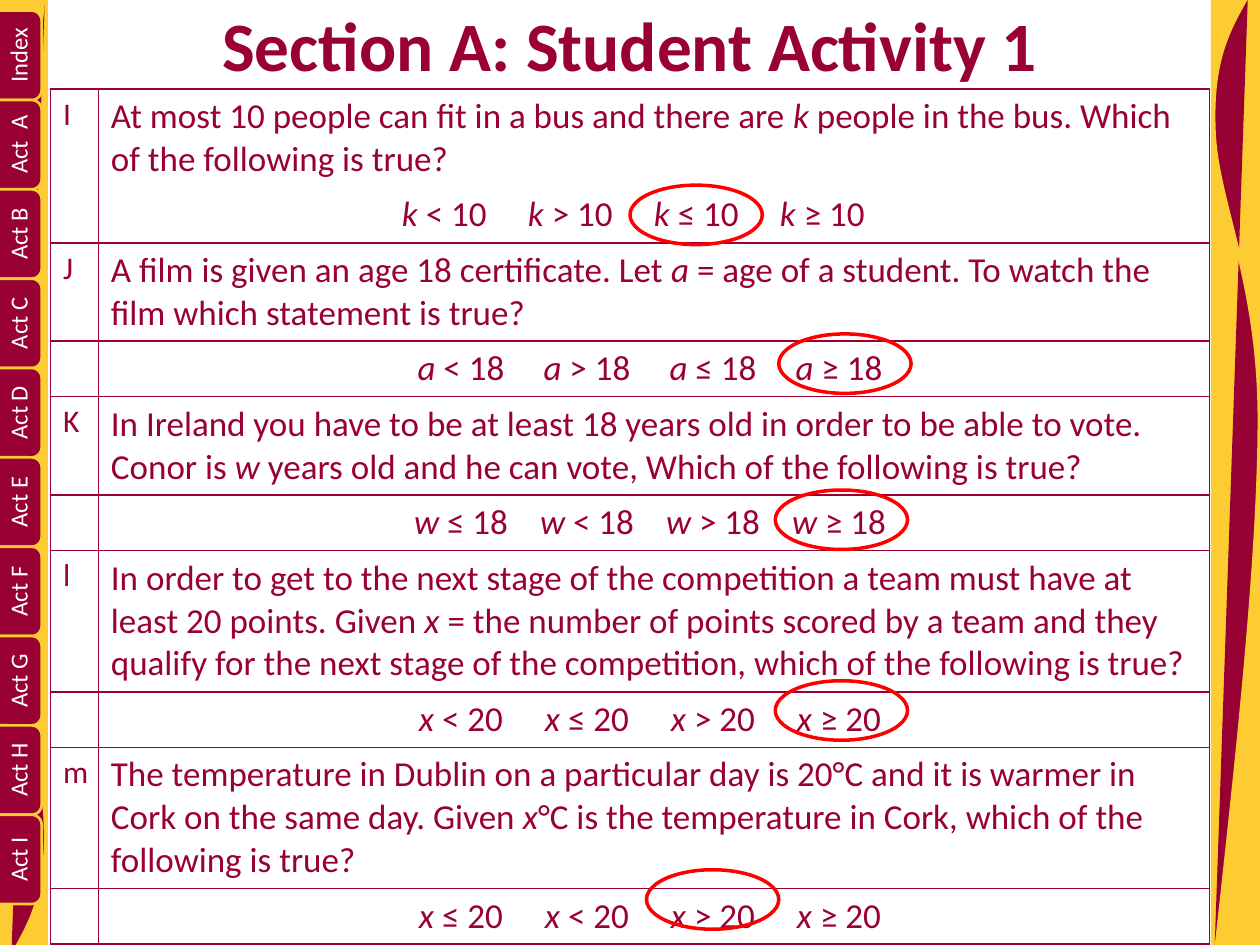
from typing import NamedTuple

from lxml.etree import SubElement
from pptx import Presentation
from pptx.dml.color import RGBColor
from pptx.enum.shapes import MSO_SHAPE as Shape
from pptx.enum.text import MSO_ANCHOR as Anchor, PP_ALIGN as Align
from pptx.oxml.ns import qn
from pptx.util import Pt

MAROON, GOLD, WHITE, RED = "990033", "FDCC33", "FFFFFF", "FF0000"
RIBBON = "970033"
PLAIN_TABLE = "{2D5ABB26-0587-4C30-8999-92F81FD0307C}"  # no style, no grid


class Question(NamedTuple):
    label: str
    wording: str  # asterisks enclose italics
    options: str
    ring_left: float
    ring_top: float
    label_align: Align = Align.LEFT


def choices(variable: str, signs: str, number: int) -> str:
    return "\t".join(f"*{variable} *{sign} {number} " for sign in signs)


QUESTIONS = [
    Question("I", "At most 10 people can fit in a bus and there are *k *people in the bus. "
             "Which of the following is true?", choices("k", "<>≤≥", 10) + "\t", 360, 105.8),
    Question("J", "A film is given an age 18 certificate. Let *a *= age of a student. "
             "To watch the film which statement is true?",
             choices("a", "<>≤≥", 18), 445, 190.8),
    Question("K", "In Ireland you have to be at least 18 years old in order to be able to vote. "
             "Conor is *w *years old and he can vote, Which of the following is true?",
             choices("w", "≤<>≥", 18), 443, 280),
    Question("l", "In order to get to the next stage of the competition a team must have at "
             "least 20 points. Given *x *= the number of points scored by a team and they "
             "qualify for the next stage of the competition, which of the following is true?",
             choices("x", "<≤>≥", 20), 443, 389),
    Question("m", "The temperature in Dublin on a particular day is 20°C and it is warmer in "
             "Cork on the same day. Given *x*°C is the temperature in Cork, which of the "
             "following is true?", choices("x", "≤<>≥", 20), 369.4, 497, Align.CENTER),
]


def color(value: str) -> RGBColor:
    return RGBColor.from_string(value)


def write(frame, text: str, *, size: float, ink: str = MAROON,
          bold: bool = False, align: Align = Align.LEFT) -> None:
    """Fill a text frame; text between asterisks is italic."""
    paragraph = frame.paragraphs[0]
    paragraph.alignment = align
    for index, part in enumerate(text.split("*")):
        if part:
            run = paragraph.add_run()
            run.text = part
            run.font.name = "Calibri"
            run.font.size = Pt(size)
            run.font.bold = bold
            run.font.italic = index % 2 == 1
            run.font.color.rgb = color(ink)


def paint(shape, fill: str | None, line: str | None, width: float = 2) -> None:
    shape.shadow.inherit = False
    if fill:
        shape.fill.solid()
        shape.fill.fore_color.rgb = color(fill)
    else:
        shape.fill.background()
    if line:
        shape.line.color.rgb = color(line)
        shape.line.width = Pt(width)
    else:
        shape.line.fill.background()


def add_figure(slide, kind: Shape, left: float, top: float, width: float, height: float):
    return slide.shapes.add_shape(kind, Pt(left), Pt(top), Pt(width), Pt(height))


def add_ribbon(slide, points: list[tuple[float, float]]) -> None:
    """Draw a start point followed by triples of Bézier points."""
    start, *rest = [(Pt(x), Pt(y)) for x, y in points]
    builder = slide.shapes.build_freeform(*start, scale=1.0)
    builder.add_line_segments(rest, close=False)
    ribbon = builder.convert_to_shape()
    segments = list(ribbon._element.iter(qn("a:lnTo")))
    for first in range(0, len(segments), 3):
        triple = segments[first:first + 3]
        curve = triple[0].makeelement(qn("a:cubicBezTo"), {})
        triple[0].addprevious(curve)
        for segment in triple:
            curve.append(segment[0])
            segment.getparent().remove(segment)
    paint(ribbon, RIBBON, GOLD)


def border(cell, sides: str) -> None:
    properties = cell._tc.get_or_add_tcPr()
    cell.fill.background()
    for position, side in enumerate(sides):
        edge = properties.makeelement(qn(f"a:ln{side}"), {"w": str(Pt(1))})
        fill = SubElement(edge, qn("a:solidFill"))
        SubElement(fill, qn("a:srgbClr"), val=MAROON)
        properties.insert(position, edge)  # edges precede the cell fill


def add_questions(slide) -> None:
    table = slide.shapes.add_table(2 * len(QUESTIONS), 2, Pt(28.8), Pt(50.8),
                                   Pt(662.4), Pt(295)).table
    table._tbl.tblPr.find(qn("a:tableStyleId")).text = PLAIN_TABLE
    table.first_row = table.horz_banding = False
    table.columns[0].width, table.columns[1].width = Pt(27.4), Pt(635)
    for row in table.rows:
        row.height = Pt(29.5)
    for index, question in enumerate(QUESTIONS):
        asked, answer = 2 * index, 2 * index + 1
        write(table.cell(asked, 0).text_frame, question.label, size=18,
              align=question.label_align)
        write(table.cell(asked, 1).text_frame, question.wording, size=20)
        write(table.cell(answer, 1).text_frame, question.options, size=20,
              align=Align.CENTER)
        for column in range(2):
            border(table.cell(asked, column), "LRT")
            border(table.cell(answer, column), "LRB")


def main() -> None:
    deck = Presentation()
    deck.slide_width, deck.slide_height = Pt(720), Pt(540)
    slide = deck.slides.add_slide(deck.slide_layouts[5])

    # Side bands; the right ribbon is the left one turned by 180 degrees
    left_edge = [(25.9, -9.4), (13, 107.3), (0, 224.6), (0, 304.6), (0, 384.5),
                 (25.2, 430.6), (25.9, 470.9), (27.4, 511.2), (16.6, 528.5), (6.5, 546.5)]
    right_edge = [(719.6 - x, 544 - y) for x, y in left_edge]
    for band_left, band_top, edge in ((691.9, -2.2, right_edge), (-3.6, -3.6, left_edge)):
        paint(add_figure(slide, Shape.RECTANGLE, band_left, band_top, 31, 549.4), GOLD, None)
        add_ribbon(slide, edge)

    # Index tabs
    tabs = ["Index", "Act  A"] + [f"Act {letter}" for letter in "BCDEFGHI"]
    for index, name in enumerate(tabs):
        tab = add_figure(slide, Shape.ROUNDED_RECTANGLE, -18.7, 14.6 + 51.05 * index, 51, 34)
        tab.rotation = 270
        paint(tab, MAROON, GOLD, 1.5)
        tab.text_frame.word_wrap = False
        tab.text_frame.vertical_anchor = Anchor.BOTTOM
        write(tab.text_frame, name, size=14, ink=WHITE, align=Align.CENTER)

    # Title
    title = slide.shapes.title
    title.left, title.top, title.width, title.height = Pt(36), Pt(1.5), Pt(648), Pt(90)
    title.text_frame.vertical_anchor = Anchor.TOP
    title.text_frame.margin_top = 0
    write(title.text_frame, "Section A: Student Activity 1", size=39.6, bold=True,
          align=Align.CENTER)

    # Questions, with a ring round each right answer
    add_questions(slide)
    for question in QUESTIONS:
        ring = add_figure(slide, Shape.OVAL, question.ring_left, question.ring_top, 75.6, 34)
        paint(ring, None, RED)

    deck.save("out.pptx")


if __name__ == "__main__":
    main()
